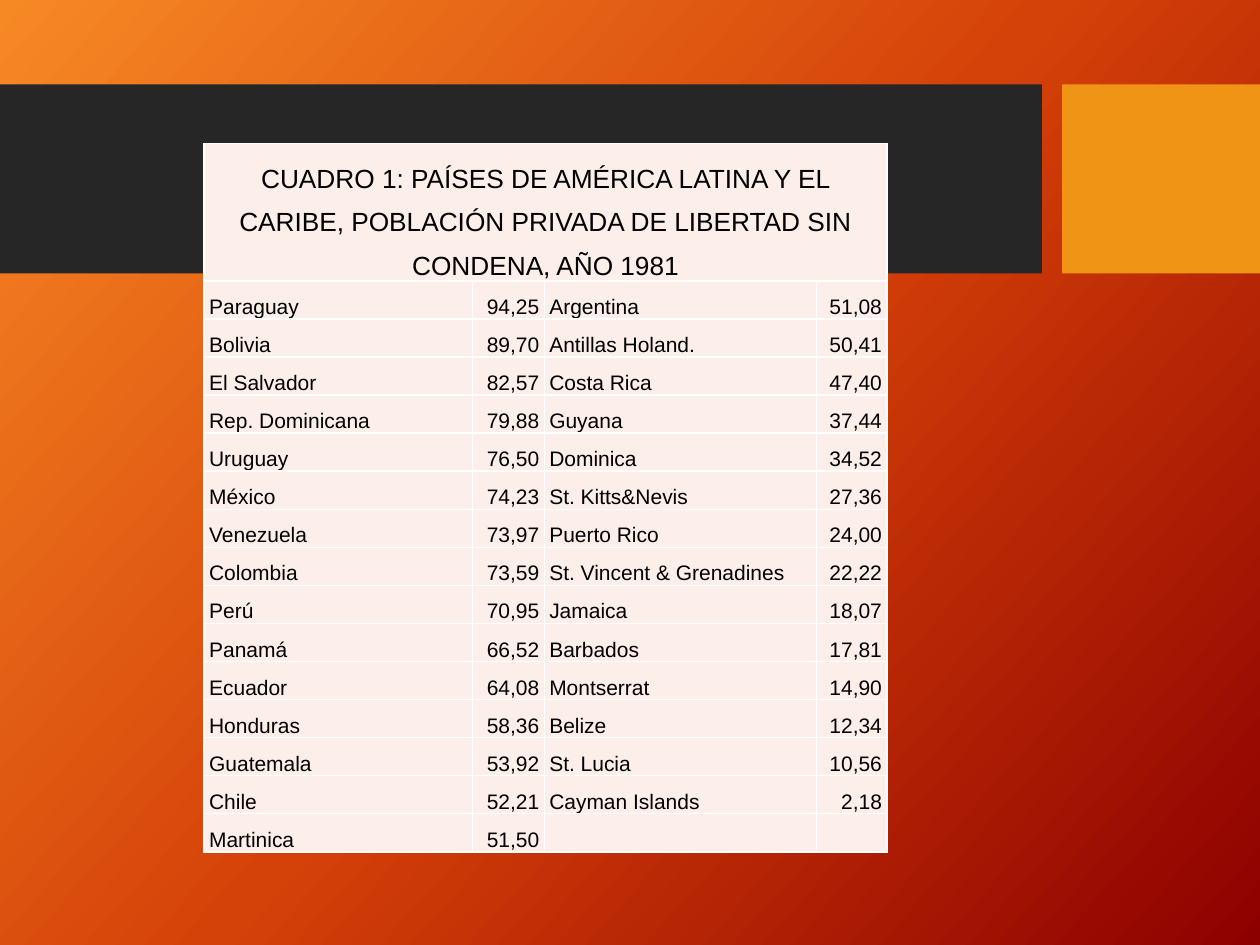
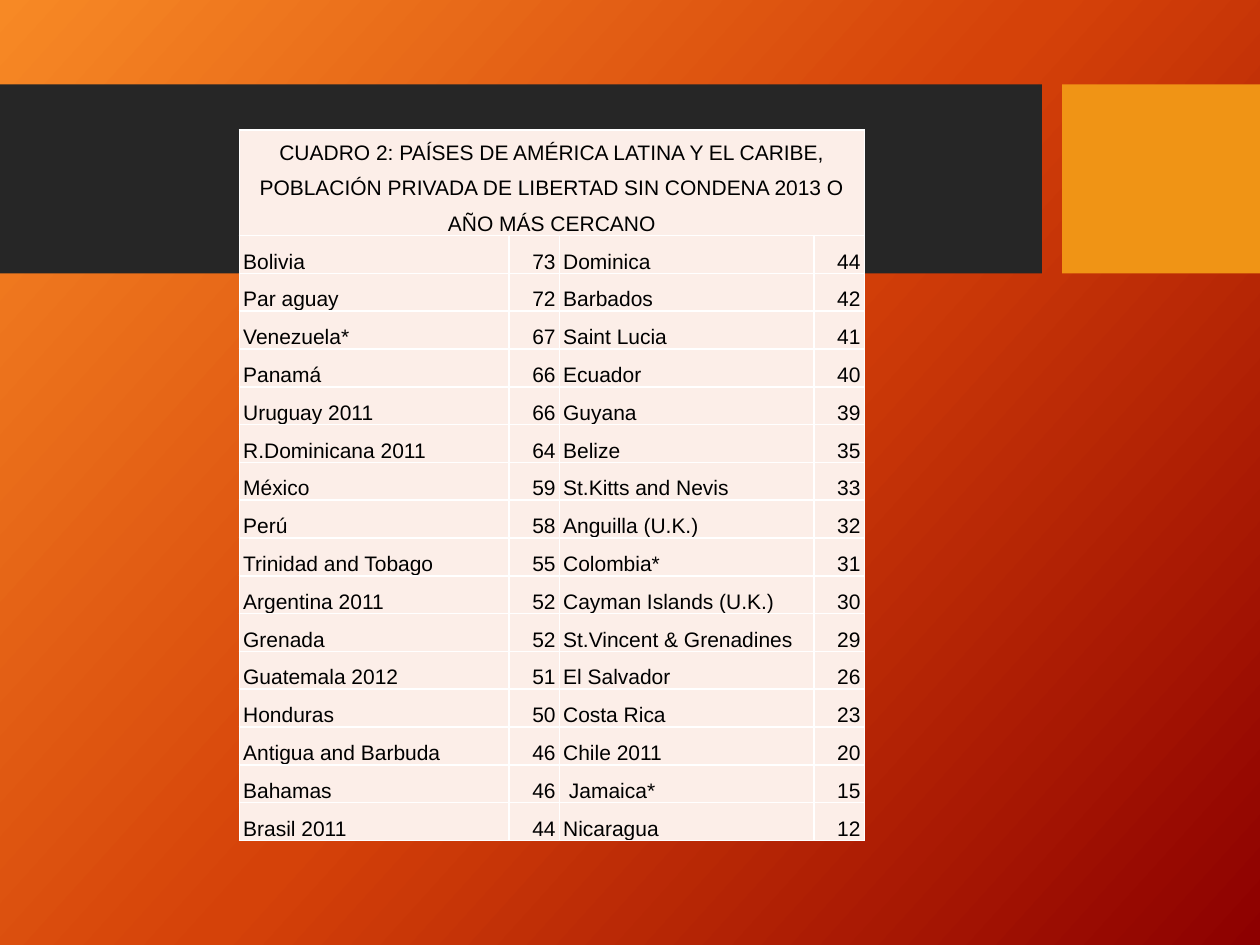
from dataclasses import dataclass

from lxml import etree
from pptx import Presentation
from pptx.dml.color import RGBColor
from pptx.enum.shapes import MSO_SHAPE
from pptx.enum.text import MSO_ANCHOR, PP_ALIGN
from pptx.oxml.ns import qn
from pptx.util import Inches, Pt

RECTANGLE = MSO_SHAPE.RECTANGLE
BOTTOM = MSO_ANCHOR.BOTTOM
LEFT, CENTER, RIGHT = PP_ALIGN.LEFT, PP_ALIGN.CENTER, PP_ALIGN.RIGHT

SLIDE_WIDTH, SLIDE_HEIGHT = Inches(10), Inches(7.5)
GRID_COLUMNS, GRID_ROWS = 100, 75
BLANK_LAYOUT = 6


@dataclass(frozen=True)
class Theme:
    font: str = "Arial"
    ink: str = "000000"
    cell: str = "FCEEE8"
    rule: str = "FFFFFF"
    dark_band: str = "262626"
    accent_band: str = "F09415"
    backdrop: tuple[tuple[int, str], ...] = (
        (0, "F78925"), (50, "D54209"), (100, "8D0000"))
    backdrop_angle: int = 42
    body_size: int = 12
    rule_width: int = 1
    line_spacing: float = 1.5


@dataclass(frozen=True)
class Band:
    left: float
    width: float
    color: str


@dataclass(frozen=True)
class CountryTable:
    title: str
    title_size: int
    left: float
    top: float
    height: float
    title_height: float
    columns: tuple[float, ...]
    side_margin: float
    rows: tuple[tuple[str, str, str, str], ...]


THEME = Theme()
BAND_TOP, BAND_HEIGHT = 6.7, 15
BANDS = (
    Band(0, 82.7, THEME.dark_band),
    Band(84.3, 15.7, THEME.accent_band),
)
ALIGNMENTS = (LEFT, RIGHT, LEFT, RIGHT)

TABLES = (
    CountryTable(
        title="CUADRO 1: PAÍSES DE AMÉRICA LATINA Y EL CARIBE, POBLACIÓN "
              "PRIVADA DE LIBERTAD SIN CONDENA, AÑO 1981",
        title_size=15,
        left=16.2, top=11.4, height=56.2, title_height=10.9,
        columns=(21.3, 5.7, 21.6, 5.6), side_margin=0.4,
        rows=(
            ("Paraguay", "94,25", "Argentina", "51,08"),
            ("Bolivia", "89,70", "Antillas Holand.", "50,41"),
            ("El Salvador", "82,57", "Costa Rica", "47,40"),
            ("Rep. Dominicana", "79,88", "Guyana", "37,44"),
            ("Uruguay", "76,50", "Dominica", "34,52"),
            ("México", "74,23", "St. Kitts&Nevis", "27,36"),
            ("Venezuela", "73,97", "Puerto Rico", "24,00"),
            ("Colombia", "73,59", "St. Vincent & Grenadines", "22,22"),
            ("Perú", "70,95", "Jamaica", "18,07"),
            ("Panamá", "66,52", "Barbados", "17,81"),
            ("Ecuador", "64,08", "Montserrat", "14,90"),
            ("Honduras", "58,36", "Belize", "12,34"),
            ("Guatemala", "53,92", "St. Lucia", "10,56"),
            ("Chile", "52,21", "Cayman Islands", "2,18"),
            ("Martinica", "51,50", "", ""),
        ),
    ),
    CountryTable(
        title="CUADRO 2: PAÍSES DE AMÉRICA LATINA Y EL CARIBE, POBLACIÓN "
              "PRIVADA DE LIBERTAD SIN CONDENA 2013 O AÑO MÁS CERCANO",
        title_size=THEME.body_size,
        left=19, top=10.3, height=54.9, title_height=6.9,
        columns=(21.4, 4, 20.2, 4), side_margin=0.3,
        rows=(
            ("Bolivia", "73", "Dominica", "44"),
            ("Par aguay", "72", "Barbados", "42"),
            ("Venezuela*", "67", "Saint Lucia", "41"),
            ("Panamá", "66", "Ecuador", "40"),
            ("Uruguay 2011", "66", "Guyana", "39"),
            ("R.Dominicana 2011", "64", "Belize", "35"),
            ("México", "59", "St.Kitts and Nevis", "33"),
            ("Perú", "58", "Anguilla (U.K.)", "32"),
            ("Trinidad and Tobago", "55", "Colombia*", "31"),
            ("Argentina 2011", "52", "Cayman Islands (U.K.)", "30"),
            ("Grenada", "52", "St.Vincent & Grenadines", "29"),
            ("Guatemala 2012", "51", "El Salvador", "26"),
            ("Honduras", "50", "Costa Rica", "23"),
            ("Antigua and Barbuda", "46", "Chile 2011", "20"),
            ("Bahamas", "46", " Jamaica*", "15"),
            ("Brasil 2011", "44", "Nicaragua", "12"),
        ),
    ),
)


def across(columns: float) -> int:
    return round(SLIDE_WIDTH * columns / GRID_COLUMNS)


def down(rows: float) -> int:
    return round(SLIDE_HEIGHT * rows / GRID_ROWS)


def paint_backdrop(master) -> None:
    fill = master.background.fill
    fill.gradient()
    fill.gradient_angle = 360 - THEME.backdrop_angle
    stops = next(master.element.iter(qn("a:gsLst")))
    for stop in list(stops):
        stops.remove(stop)
    for percent, color in THEME.backdrop:
        stop = etree.SubElement(stops, qn("a:gs"), pos=str(percent * 1000))
        etree.SubElement(stop, qn("a:srgbClr"), val=color)


def draw_band(slide, band: Band) -> None:
    shape = slide.shapes.add_shape(
        RECTANGLE, across(band.left), down(BAND_TOP),
        across(band.width), down(BAND_HEIGHT))
    shape.shadow.inherit = False
    shape.fill.solid()
    shape.fill.fore_color.rgb = RGBColor.from_string(band.color)
    shape.line.fill.background()


def rule_cell(cell) -> None:
    properties = cell._tc.get_or_add_tcPr()
    for side in ("lnL", "lnR", "lnT", "lnB"):
        rule = etree.SubElement(
            properties, qn(f"a:{side}"), w=str(Pt(THEME.rule_width)))
        paint = etree.SubElement(rule, qn("a:solidFill"))
        etree.SubElement(paint, qn("a:srgbClr"), val=THEME.rule)


def style_cell(cell, side_margin: float) -> None:
    rule_cell(cell)
    cell.fill.solid()
    cell.fill.fore_color.rgb = RGBColor.from_string(THEME.cell)
    cell.vertical_anchor = BOTTOM
    cell.margin_left = cell.margin_right = across(side_margin)
    cell.margin_top = cell.margin_bottom = 0


def write_cell(cell, text: str, size: int, alignment: PP_ALIGN) -> None:
    paragraph = cell.text_frame.paragraphs[0]
    paragraph.alignment = alignment
    paragraph.line_spacing = THEME.line_spacing
    run = paragraph.add_run()
    run.text = text
    run.font.name = THEME.font
    run.font.size = Pt(size)
    run.font.bold = False
    run.font.color.rgb = RGBColor.from_string(THEME.ink)


def draw_country_table(slide, content: CountryTable) -> None:
    table = slide.shapes.add_table(
        len(content.rows) + 1, len(content.columns),
        across(content.left), down(content.top),
        across(sum(content.columns)), down(content.height)).table
    table.first_row = table.horz_banding = False
    for column, width in zip(table.columns, content.columns):
        column.width = across(width)
    row_height = (content.height - content.title_height) / len(content.rows)
    for row in table.rows:
        row.height = down(row_height)
    table.rows[0].height = down(content.title_height)
    for cell in table.iter_cells():
        style_cell(cell, content.side_margin)

    title = table.cell(0, 0)
    title.merge(table.cell(0, len(content.columns) - 1))
    write_cell(title, content.title, content.title_size, CENTER)
    for row_index, values in enumerate(content.rows, start=1):
        for column_index, value in enumerate(values):
            if value:
                write_cell(table.cell(row_index, column_index), value,
                           THEME.body_size, ALIGNMENTS[column_index])


def main() -> None:
    presentation = Presentation()
    presentation.slide_width = SLIDE_WIDTH
    presentation.slide_height = SLIDE_HEIGHT
    paint_backdrop(presentation.slide_master)
    for content in TABLES:
        slide = presentation.slides.add_slide(
            presentation.slide_layouts[BLANK_LAYOUT])
        for band in BANDS:
            draw_band(slide, band)
        draw_country_table(slide, content)
    presentation.save("out.pptx")


if __name__ == "__main__":
    main()
